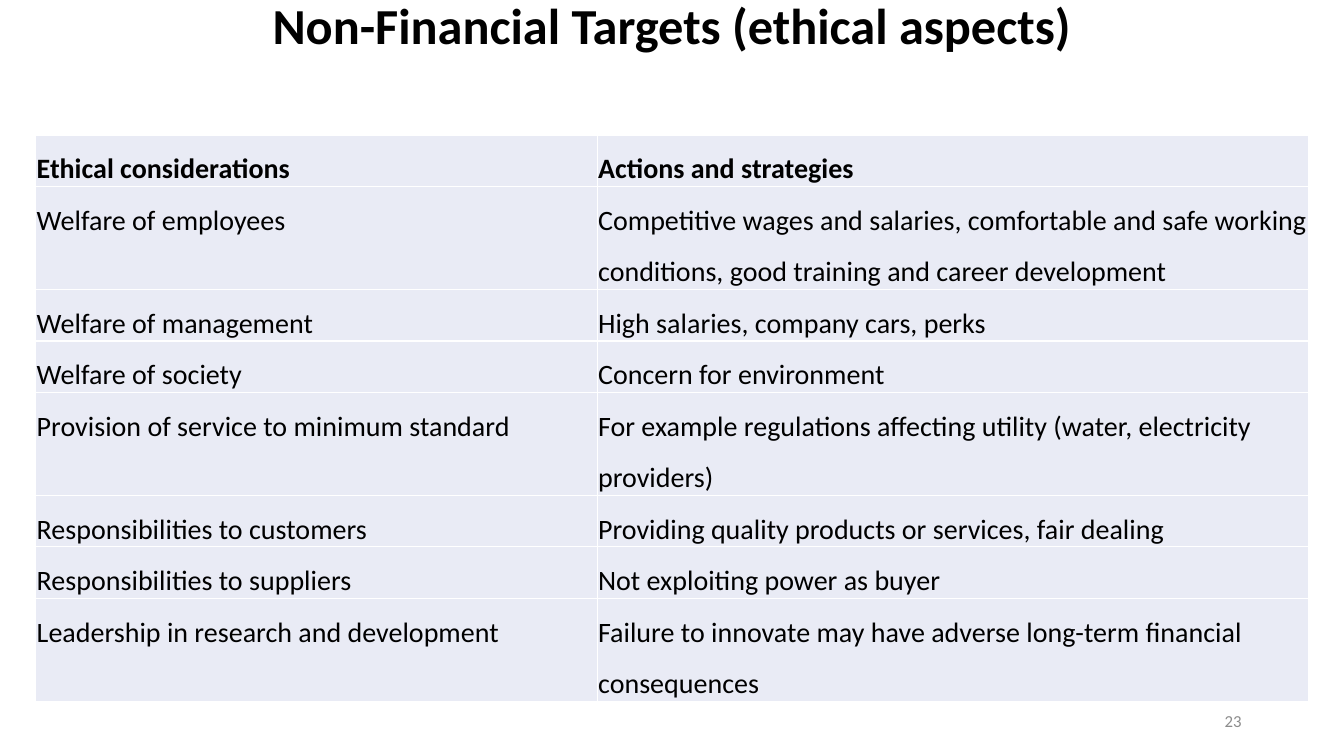
import pptx
import pptx.dml.color
import pptx.enum.text
import pptx.oxml
import pptx.oxml.ns
import pptx.util

Pt = pptx.util.Pt
Color = pptx.dml.color.RGBColor.from_string
Align = pptx.enum.text.PP_ALIGN
Anchor = pptx.enum.text.MSO_ANCHOR

THEME = {
    "font": "Calibri",
    "ink": "000000",
    "muted": "8C8C8C",
    "cell": "E9EBF5",
    "border": "FFFFFF",
    "title": 36,
    "body": 20,
    "number": 12,
}
HEADER_HEIGHT, SINGLE_HEIGHT, DOUBLE_HEIGHT = 31.7, 30.2, 52.6
ROWS = [
    ("Ethical considerations", "Actions and strategies", HEADER_HEIGHT),
    ("Welfare of employees",
     "Competitive wages and salaries, comfortable and safe working conditions, "
     "good training and career development", DOUBLE_HEIGHT),
    ("Welfare of management", "High salaries, company cars, perks", SINGLE_HEIGHT),
    ("Welfare of society", "Concern for environment", SINGLE_HEIGHT),
    ("Provision of service to minimum standard",
     "For example regulations affecting utility (water, electricity providers)",
     DOUBLE_HEIGHT),
    ("Responsibilities to customers",
     "Providing quality products or services, fair dealing", SINGLE_HEIGHT),
    ("Responsibilities to suppliers", "Not exploiting power as buyer", SINGLE_HEIGHT),
    ("Leadership in research and development",
     "Failure to innovate may have adverse long-term financial consequences",
     DOUBLE_HEIGHT),
]


def write(frame, text, size, color, bold, align, spacing):
    para = frame.paragraphs[0]
    para.alignment = align
    para.line_spacing = spacing
    span = para.add_run()
    span.text = text
    span.font.color.rgb = Color(THEME[color])
    formats = {"name": THEME["font"], "size": Pt(THEME[size]), "bold": bold}
    for name, value in formats.items():
        setattr(span.font, name, value)


def add_borders(cell):
    properties = cell._tc.get_or_add_tcPr()
    for side in ("lnL", "lnR", "lnT", "lnB"):
        properties.append(pptx.oxml.parse_xml(
            f'<a:{side} {pptx.oxml.ns.nsdecls("a")} w="{Pt(1)}"><a:solidFill>'
            f'<a:srgbClr val="{THEME["border"]}"/></a:solidFill></a:{side}>'))


deck = pptx.Presentation()
deck.slide_width, deck.slide_height = Pt(960), Pt(540)
page = deck.slides.add_slide(deck.slide_layouts[5])

title = page.shapes.title
title.left, title.top, title.width, title.height = Pt(0), Pt(0), Pt(960), Pt(39.6)
title.text_frame.auto_size = pptx.enum.text.MSO_AUTO_SIZE.NONE
title.text_frame.vertical_anchor = Anchor.MIDDLE
write(title.text_frame, "Non-Financial Targets (ethical aspects)",
      "title", "ink", True, Align.CENTER, 0.9)

table = page.shapes.add_table(
    len(ROWS), 2, Pt(25.5), Pt(96.5), Pt(909.4), Pt(sum(row[2] for row in ROWS))).table
table.horz_banding = False
table.first_row = False
for column, width in zip(table.columns, (401, 508.4)):
    column.width = Pt(width)

for row_index, (*texts, height) in enumerate(ROWS):
    table.rows[row_index].height = Pt(height)
    for column_index, text in enumerate(texts):
        cell = table.cell(row_index, column_index)
        beside_double = column_index == 0 and height == DOUBLE_HEIGHT
        formats = {
            "margin_left": Pt(0.75),
            "margin_right": Pt(0.75),
            "margin_top": Pt(0),
            "margin_bottom": Pt(0),
            "vertical_anchor": Anchor.TOP if beside_double else Anchor.BOTTOM,
        }
        for name, value in formats.items():
            setattr(cell, name, value)
        add_borders(cell)
        cell.fill.solid()
        cell.fill.fore_color.rgb = Color(THEME["cell"])
        write(cell.text_frame, text, "body", "ink", row_index == 0, Align.LEFT, 1.5)

number = page.shapes.add_textbox(Pt(678), Pt(500.5), Pt(216), Pt(28.75))
number.text_frame.word_wrap = True
number.text_frame.vertical_anchor = Anchor.MIDDLE
write(number.text_frame, "23", "number", "muted", False, Align.RIGHT, 1.0)

deck.save("out.pptx")
